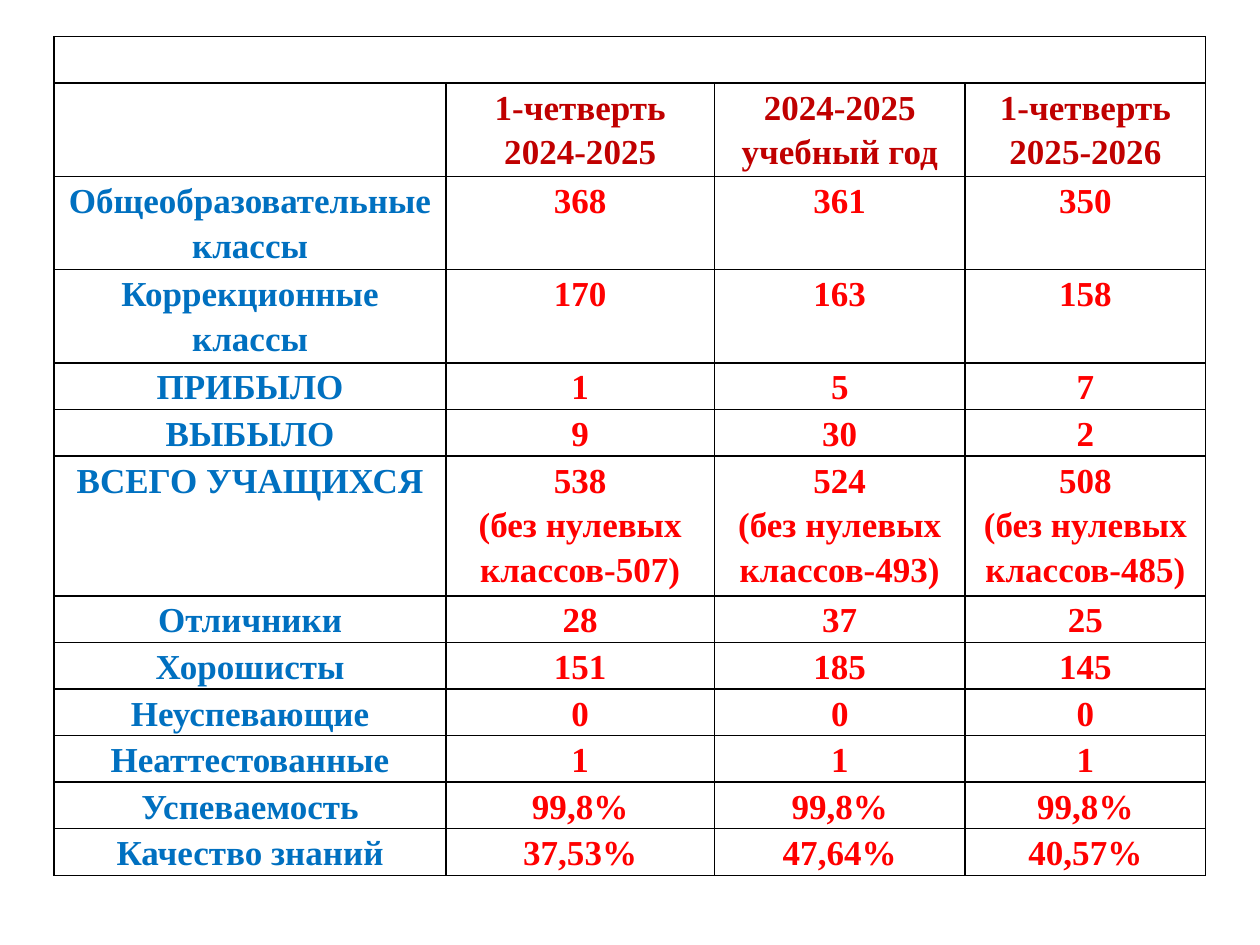
from dataclasses import dataclass

from lxml.etree import SubElement
from pptx import Presentation
from pptx.dml.color import RGBColor as Color
from pptx.enum.text import PP_ALIGN as Align
from pptx.oxml.ns import qn
from pptx.util import Inches, Pt


@dataclass(frozen=True)
class Theme:
    font: str = "Times New Roman"
    size: int = 20
    spacing: float = 1.15
    heading: str = "C00000"
    label: str = "0070C0"
    value: str = "FF0000"
    border: str = "000000"
    border_width: int = 1


THEME = Theme()
SLIDE_SIZE = (10, 7.5)
TABLE_ORIGIN = (0.43, 0.29)
COLUMN_WIDTHS = (3.11, 2.13, 1.99, 1.91)
LINE_HEIGHT = 0.37
CELL_FORMAT = {
    "margin_left": Inches(0.07),
    "margin_right": Inches(0.07),
    "margin_top": 0,
    "margin_bottom": 0,
}
PARAGRAPH_FORMAT = {"alignment": Align.CENTER, "line_spacing": THEME.spacing}
FONT_FORMAT = {"name": THEME.font, "size": Pt(THEME.size), "bold": True}
TABLE_FORMAT = {"first_row": False, "horz_banding": False}

ROWS = [
    (1, "", "", "", ""),
    (2, "", "1-четверть 2024-2025", "2024-2025 учебный год", "1-четверть 2025-2026"),
    (2, "Общеобразовательные классы", "368", "361", "350"),
    (2, "Коррекционные классы", "170", "163", "158"),
    (1, "ПРИБЫЛО", "1", "5", "7"),
    (1, "ВЫБЫЛО", "9", "30", "2"),
    (3, "ВСЕГО УЧАЩИХСЯ", *(
        f"{total}\n(без нулевых классов-{without_zero})"
        for total, without_zero in ((538, 507), (524, 493), (508, 485))
    )),
    (1, "Отличники", "28", "37", "25"),
    (1, "Хорошисты", "151", "185", "145"),
    (1, "Неуспевающие", "0", "0", "0"),
    (1, "Неаттестованные", "1", "1", "1"),
    (1, "Успеваемость", "99,8%", "99,8%", "99,8%"),
    (1, "Качество знаний", "37,53%", "47,64%", "40,57%"),
]
HEADING_ROW = 1


def apply_format(target, values):
    """Set every attribute named in values on the target."""
    for name, value in values.items():
        setattr(target, name, value)


def add_borders(cell):
    """Draw a solid line on all four sides of a cell."""
    properties = cell._tc.get_or_add_tcPr()
    for side in ("lnL", "lnR", "lnT", "lnB"):
        line = SubElement(properties, qn(f"a:{side}"), w=str(Pt(THEME.border_width)))
        fill = SubElement(line, qn("a:solidFill"))
        SubElement(fill, qn("a:srgbClr"), val=THEME.border)


def write_text(cell, text, color):
    """Write centred bold lines of one colour into a cell."""
    cell.text = text
    for paragraph in cell.text_frame.paragraphs:
        apply_format(paragraph, PARAGRAPH_FORMAT)
        for run in paragraph.runs:
            apply_format(run.font, FONT_FORMAT)
            run.font.color.rgb = Color.from_string(color)


def pick_color(row, column):
    """Return the text colour for a place in the table."""
    if row <= HEADING_ROW:
        return THEME.heading
    return THEME.value if column else THEME.label


def add_results_table(slide):
    """Add the table of pupil numbers and results by period."""
    line_count = sum(lines for lines, *_ in ROWS)
    size = (sum(COLUMN_WIDTHS), line_count * LINE_HEIGHT)
    frame = slide.shapes.add_table(
        len(ROWS), len(COLUMN_WIDTHS), *map(Inches, TABLE_ORIGIN + size)
    )
    table = frame.table
    apply_format(table, TABLE_FORMAT)
    for column, width in zip(table.columns, COLUMN_WIDTHS):
        column.width = Inches(width)
    for row_index, (lines, *texts) in enumerate(ROWS):
        table.rows[row_index].height = Inches(lines * LINE_HEIGHT)
        for column_index, text in enumerate(texts):
            cell = table.cell(row_index, column_index)
            apply_format(cell, CELL_FORMAT)
            add_borders(cell)
            cell.fill.background()
            if text:
                write_text(cell, text, pick_color(row_index, column_index))
    table.cell(0, 0).merge(table.cell(0, len(COLUMN_WIDTHS) - 1))


def main():
    """Build the slide and save the presentation."""
    presentation = Presentation()
    presentation.slide_width, presentation.slide_height = map(Inches, SLIDE_SIZE)
    slide = presentation.slides.add_slide(presentation.slide_layouts[6])
    add_results_table(slide)
    presentation.save("out.pptx")


if __name__ == "__main__":
    main()
